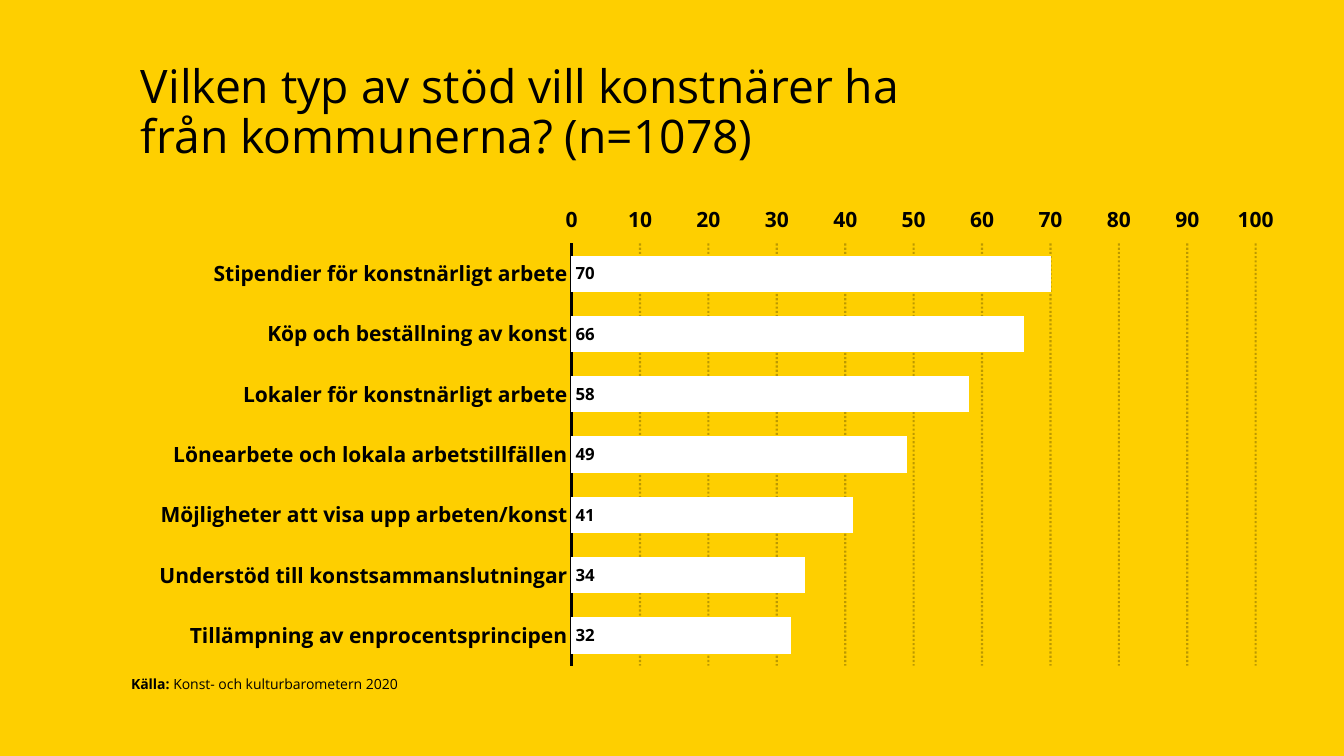
from dataclasses import dataclass

from lxml.etree import SubElement
from pptx import Presentation
from pptx.chart.data import CategoryChartData
from pptx.dml.color import RGBColor
from pptx.enum.chart import XL_CHART_TYPE, XL_LABEL_POSITION, XL_TICK_MARK
from pptx.enum.dml import MSO_LINE
from pptx.enum.text import MSO_ANCHOR
from pptx.oxml import parse_xml
from pptx.oxml.ns import nsdecls, qn
from pptx.util import Inches, Pt


@dataclass(frozen=True)
class Theme:
    background: RGBColor = RGBColor(0xFE, 0xCF, 0x00)
    ink: RGBColor = RGBColor(0, 0, 0)
    bar: RGBColor = RGBColor(0xFF, 0xFF, 0xFF)
    font: str = "Open Sans"
    chart_font: str = "Roboto"
    title: Pt = Pt(33)
    axis: Pt = Pt(15)
    value: Pt = Pt(12)
    small: Pt = Pt(10)


THEME = Theme()

SUPPORT_TYPES = {
    "Stipendier för konstnärligt arbete": 70,
    "Köp och beställning av konst": 66,
    "Lokaler för konstnärligt arbete": 58,
    "Lönearbete och lokala arbetstillfällen": 49,
    "Möjligheter att visa upp arbeten/konst": 41,
    "Understöd till konstsammanslutningar": 34,
    "Tillämpning av enprocentsprincipen": 32,
}


def style_font(font, size, bold=None, name=THEME.font):
    font.name = name
    font.size = size
    font.bold = bold
    font.color.rgb = THEME.ink


def add_title(slide, left, top, width, height):
    frame = slide.shapes.add_textbox(left, top, width, height).text_frame
    frame.word_wrap = True
    frame.vertical_anchor = MSO_ANCHOR.MIDDLE
    question = frame.paragraphs[0]
    question.text = "Vilken typ av stöd vill konstnärer ha \vfrån kommunerna? (n=1078)"
    question.line_spacing = 0.9
    style_font(question.font, THEME.title)


def add_source(slide, left, top, width, height):
    frame = slide.shapes.add_textbox(left, top, width, height).text_frame
    frame.word_wrap = True
    frame.margin_left = 0
    source = frame.paragraphs[0]
    style_font(source.font, THEME.small)
    for words, bold in (("Källa: ", True), ("Konst- och kulturbarometern 2020", False)):
        run = source.add_run()
        run.text = words
        run.font.bold = bold


def place_plot(chart, x, y, w, h):
    """Fix the inner plot area as fractions of the chart's box."""
    plot_area = chart.element.find(".//" + qn("c:plotArea"))
    for layout in plot_area.findall(qn("c:layout")):
        plot_area.remove(layout)
    plot_area.insert(0, parse_xml(
        f'<c:layout {nsdecls("c")}><c:manualLayout><c:layoutTarget val="inner"/>'
        '<c:xMode val="edge"/><c:yMode val="edge"/>'
        f'<c:x val="{x}"/><c:y val="{y}"/><c:w val="{w}"/><c:h val="{h}"/>'
        '</c:manualLayout></c:layout>'))


def add_support_chart(slide, left, top, width, height):
    data = CategoryChartData()
    data.categories = list(SUPPORT_TYPES)
    data.add_series("Series 1", list(SUPPORT_TYPES.values()))
    chart = slide.shapes.add_chart(
        XL_CHART_TYPE.BAR_CLUSTERED, left, top, width, height, data).chart
    chart.has_legend = False
    chart.has_title = False
    style_font(chart.font, THEME.small, name=THEME.chart_font)
    place_plot(chart, 0.38, 0.1, 0.59, 0.88)

    # Support types, listed from the top
    types = chart.category_axis
    types.reverse_order = True
    types.major_tick_mark = XL_TICK_MARK.NONE
    types.format.line.color.rgb = THEME.ink
    types.format.line.width = Pt(2)
    style_font(types.tick_labels.font, THEME.axis, True)

    # Percentage scale with faint dotted gridlines
    scale = chart.value_axis
    scale.minimum_scale, scale.maximum_scale, scale.major_unit = 0, 100, 10
    scale.format.line.fill.background()
    style_font(scale.tick_labels.font, THEME.axis, True)
    grid = scale.major_gridlines.format.line
    grid.color.rgb = THEME.ink
    grid.width = Pt(1.5)
    grid.dash_style = MSO_LINE.ROUND_DOT
    grid_color = scale.major_gridlines._xAx.find(
        qn("c:majorGridlines")).find(".//" + qn("a:srgbClr"))
    SubElement(grid_color, qn("a:alpha")).set("val", "25000")

    # Bars with their values at the base
    plot = chart.plots[0]
    plot.gap_width = 71
    plot.vary_by_categories = False
    bars = plot.series[0]
    bars.format.fill.solid()
    bars.format.fill.fore_color.rgb = THEME.bar
    bars.format.line.color.rgb = THEME.bar
    bars.format.line.width = Pt(0)
    labels = bars.data_labels
    labels.show_value = True
    labels.position = XL_LABEL_POSITION.INSIDE_BASE
    style_font(labels.font, THEME.value, True)


def main():
    deck = Presentation()
    deck.slide_width, deck.slide_height = Inches(13.33), Inches(7.5)
    slide = deck.slides.add_slide(deck.slide_layouts[6])
    slide.background.fill.solid()
    slide.background.fill.fore_color.rgb = THEME.background

    left, width = Inches(1.3), Inches(11.5)
    add_title(slide, left, Inches(0.4), Inches(11.12), Inches(1.45))
    add_source(slide, left, Inches(6.65), width, Inches(0.27))
    add_support_chart(slide, left, Inches(1.94), width, Inches(4.76))
    deck.save("out.pptx")


if __name__ == "__main__":
    main()
